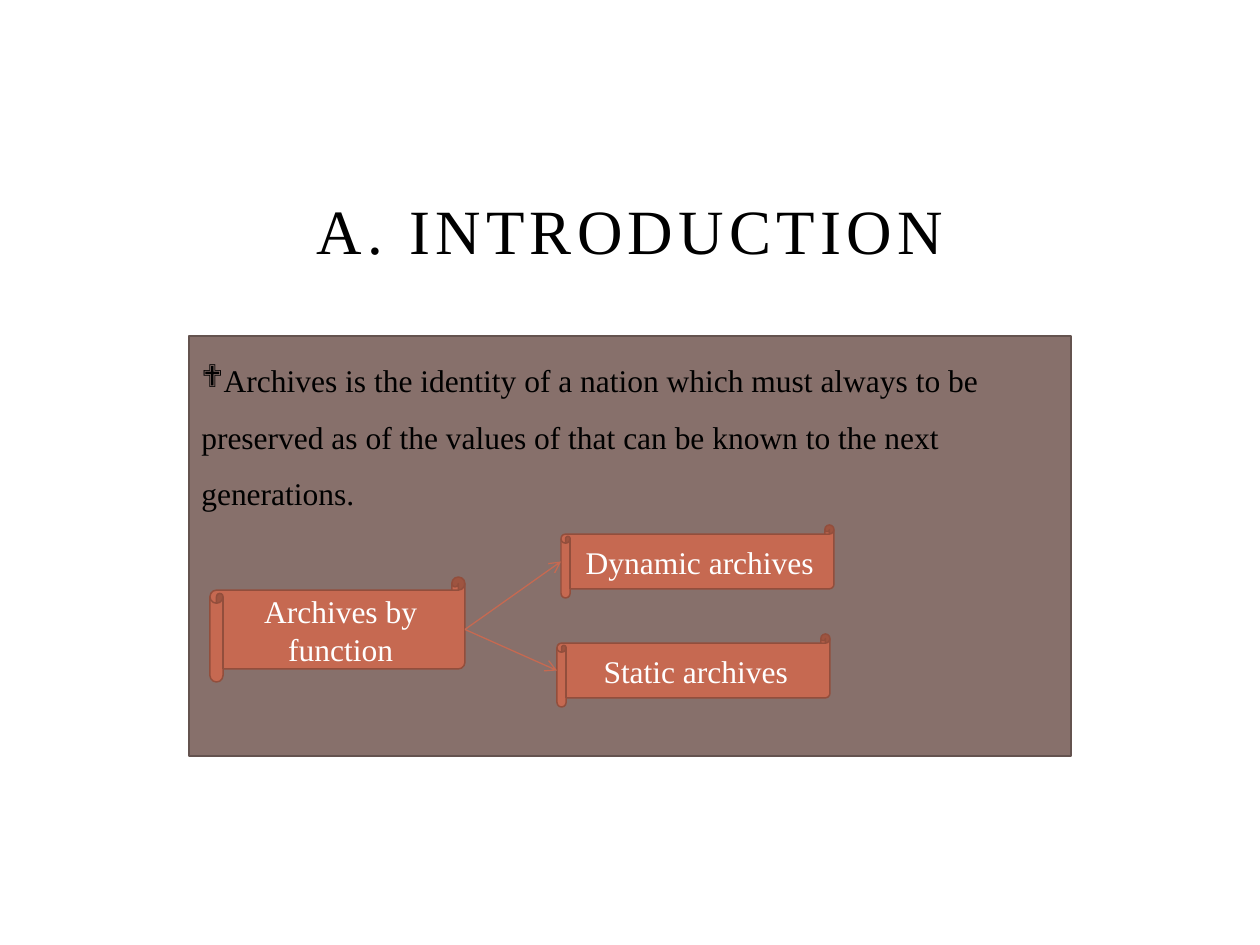
import pptx
import pptx.dml.color
import pptx.enum.shapes
import pptx.enum.text
import pptx.oxml
import pptx.oxml.ns
import pptx.util

PX = 914400 / 126
SHAPE = pptx.enum.shapes.MSO_SHAPE
ALIGN = pptx.enum.text.PP_ALIGN
ANCHOR = pptx.enum.text.MSO_ANCHOR


def px(length):
    return pptx.util.Emu(round(length * PX))


def color(value):
    return pptx.dml.color.RGBColor.from_string(value)


def add_xml(parent, tag, **attributes):
    element = pptx.oxml.parse_xml(f"<{tag} {pptx.oxml.ns.nsdecls('a')}/>")
    for name, value in attributes.items():
        element.set(name, value)
    parent.append(element)


class SlideBuilder:
    font = "Times New Roman"
    ink = "000000"
    panel_fill, panel_line = "87706B", "64534F"
    scroll_fill, scroll_line = "C66951", "924E3C"

    def __init__(self, page):
        self.page = page

    def set_text(self, shape, text, size, ink, align, anchor):
        frame = shape.text_frame
        frame.word_wrap = True
        frame.vertical_anchor = anchor
        frame.text = text
        para = frame.paragraphs[0]
        para.alignment = align
        span = para.runs[0]
        span.font.name = self.font
        span.font.size = pptx.util.Pt(size)
        span.font.color.rgb = color(ink)
        return para

    def title(self, text, left, top, width, height):
        box = self.page.shapes.add_textbox(px(left), px(top), px(width), px(height))
        para = self.set_text(box, text, 36, self.ink, ALIGN.CENTER, ANCHOR.BOTTOM)
        para.runs[0]._r.get_or_add_rPr().set("spc", "300")

    def shape(self, kind, left, top, width, height, fill, line):
        shape = self.page.shapes.add_shape(kind, px(left), px(top), px(width), px(height))
        shape.shadow.inherit = False
        shape.fill.solid()
        shape.fill.fore_color.rgb = color(fill)
        shape.line.color.rgb = color(line)
        shape.line.width = pptx.util.Pt(0.85)
        return shape

    def panel(self, text, left, top, width, height):
        panel = self.shape(SHAPE.RECTANGLE, left, top, width, height,
                           self.panel_fill, self.panel_line)
        para = self.set_text(panel, text, 18, self.ink, ALIGN.LEFT, ANCHOR.TOP)
        para.line_spacing = 1.5
        properties = para._p.get_or_add_pPr()
        properties.set("marL", "0")
        properties.set("indent", "0")
        add_xml(properties, "a:buFont", typeface="Wingdings")
        add_xml(properties, "a:buChar", char="❖")

    def scroll(self, text, left, top, width, height):
        scroll = self.shape(SHAPE.HORIZONTAL_SCROLL, left, top, width, height,
                            self.scroll_fill, self.scroll_line)
        self.set_text(scroll, text, 18, "FFFFFF", ALIGN.CENTER, ANCHOR.MIDDLE)
        return scroll

    def arrow(self, source, target):
        arrow = self.page.shapes.add_connector(
            pptx.enum.shapes.MSO_CONNECTOR.STRAIGHT,
            source.left + source.width, source.top + source.height // 2,
            target.left, target.top + target.height // 2)
        arrow.line.color.rgb = color(self.scroll_fill)
        arrow.line.width = pptx.util.Pt(0.75)
        add_xml(arrow.line._get_or_add_ln(), "a:tailEnd", type="arrow")
        add_xml(arrow._element.spPr, "a:effectLst")


def main():
    deck = pptx.Presentation()
    deck.slide_width, deck.slide_height = px(1260), px(945)
    builder = SlideBuilder(deck.slides.add_slide(deck.slide_layouts[6]))

    builder.title("A. INTRODUCTION", 189, 179, 882, 94)
    builder.panel("Archives is the identity of a nation which must always to be "
                  "preserved as of the values of that can be known to the next "
                  "generations.", 189, 336, 882, 420)

    function = builder.scroll("Archives by function", 210, 577, 255, 105)
    kinds = [builder.scroll(text, left, top, 273, 73)
             for text, left, top in (("Dynamic archives", 561, 525),
                                     ("Static archives", 557, 634))]
    for kind in kinds:
        builder.arrow(function, kind)

    deck.save("out.pptx")


if __name__ == "__main__":
    main()
